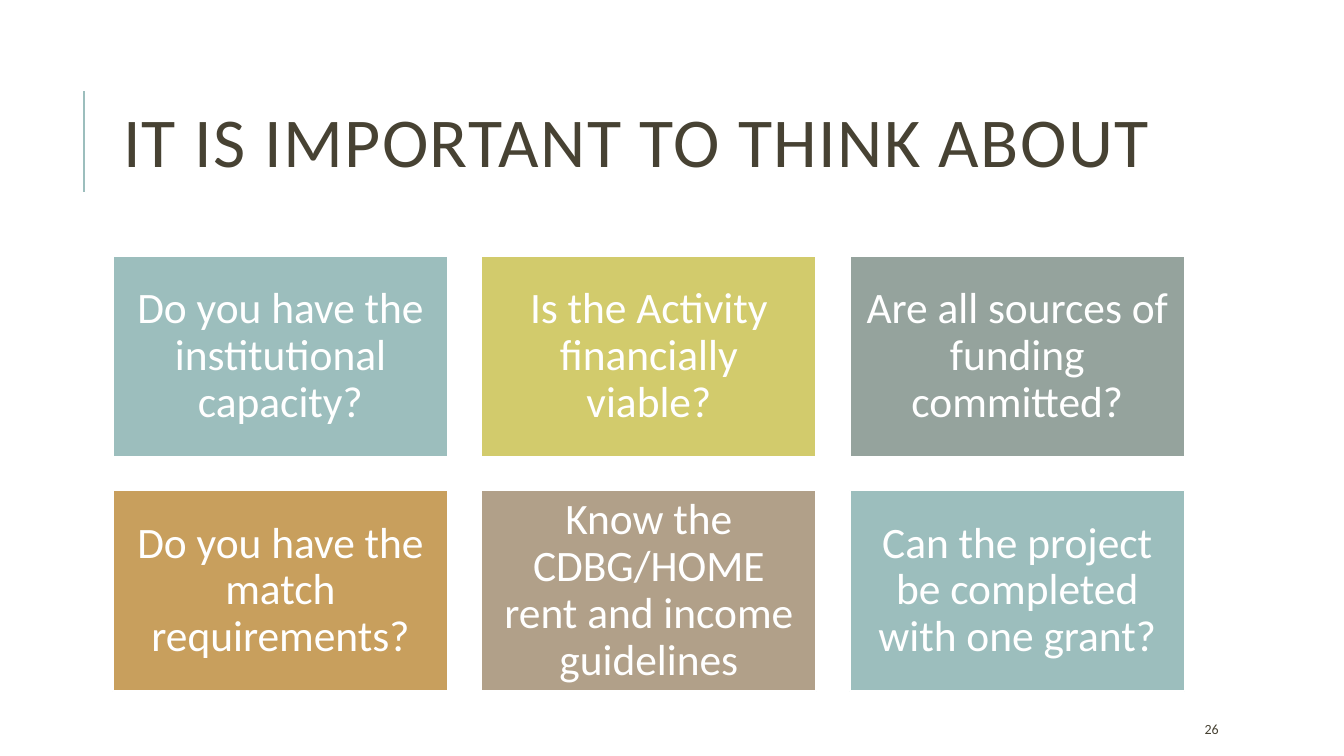
from dataclasses import dataclass

from lxml import etree
from pptx import Presentation
from pptx.dml.color import RGBColor
from pptx.enum.shapes import MSO_CONNECTOR, MSO_SHAPE
from pptx.enum.text import MSO_ANCHOR, MSO_AUTO_SIZE, PP_ALIGN
from pptx.oxml.ns import qn
from pptx.util import Inches, Pt

STRAIGHT = MSO_CONNECTOR.STRAIGHT
RECT = MSO_SHAPE.RECTANGLE
MIDDLE = MSO_ANCHOR.MIDDLE
NO_FIT = MSO_AUTO_SIZE.NONE
LEFT, CENTER = PP_ALIGN.LEFT, PP_ALIGN.CENTER
TITLE_ONLY = 5


@dataclass(frozen=True)
class Theme:
    font: str = "Calibri"
    ink: str = "474233"
    white: str = "FFFFFF"
    accents: tuple = ("9CBEBD", "D2CB6C", "95A39D", "C89F5D", "B1A089")
    title_size: int = 50
    card_size: int = 31
    number_size: int = 10


@dataclass(frozen=True)
class Grid:
    """Card grid whose gap and card height are shares of the card width."""
    left: float = 1.12
    top: float = 2.54
    width: float = 10.63
    columns: int = 3
    gap_share: float = 0.1
    height_share: float = 0.6

    def cell(self, index):
        row, col = divmod(index, self.columns)
        w = self.width / (self.columns + (self.columns - 1) * self.gap_share)
        h, gap = w * self.height_share, w * self.gap_share
        box = self.left + col * (w + gap), self.top + row * (h + gap), w, h
        return [Inches(v) for v in box]


class SlideBuilder:
    def __init__(self, prs, theme, grid):
        self.theme, self.grid = theme, grid
        self.slide = prs.slides.add_slide(prs.slide_layouts[TITLE_ONLY])

    def set_text(self, sp, text, size, color, align=LEFT, spacing=1.0):
        tf = sp.text_frame
        tf.word_wrap, tf.auto_size, tf.vertical_anchor = True, NO_FIT, MIDDLE
        p = tf.paragraphs[0]
        p.text, p.alignment, p.line_spacing = text, align, spacing
        p.font.name, p.font.size = self.theme.font, Pt(size)
        p.font.color.rgb = RGBColor.from_string(color)
        return p

    def rule(self, x, top, bottom):
        line = self.slide.shapes.add_connector(
            STRAIGHT, Inches(x), Inches(bottom), Inches(x), Inches(top))
        line.line.color.rgb = RGBColor.from_string(self.theme.accents[0])
        line.line.width = Pt(1.5)
        etree.SubElement(line._element.spPr, qn("a:effectLst"))

    def title(self, text, top, height):
        sp = self.slide.shapes.title
        sp.left, sp.top = Inches(self.grid.left), Inches(top)
        sp.width, sp.height = Inches(self.grid.width), Inches(height)
        p = self.set_text(sp, text, self.theme.title_size, self.theme.ink, spacing=0.8)
        p.runs[0].font._element.set("spc", "100")

    def card(self, index, text):
        t = self.theme
        sp = self.slide.shapes.add_shape(RECT, *self.grid.cell(index))
        sp.shadow.inherit = False
        sp.fill.solid()
        sp.fill.fore_color.rgb = RGBColor.from_string(t.accents[index % len(t.accents)])
        sp.line.color.rgb = RGBColor.from_string(t.white)
        sp.line.width = Pt(1.25)
        tf = sp.text_frame
        tf.margin_left = tf.margin_right = Inches(0.13)
        tf.margin_top = tf.margin_bottom = Inches(0.13)
        self.set_text(sp, text, t.card_size, t.white, CENTER, 0.9)

    def page_number(self, number, *box):
        sp = self.slide.shapes.add_textbox(*(Inches(v) for v in box))
        self.set_text(sp, str(number), self.theme.number_size, self.theme.ink)


def main():
    prs = Presentation()
    prs.slide_width, prs.slide_height = Inches(13.33), Inches(7.5)

    questions = (
        "Do you have the institutional capacity?",
        "Is the Activity financially viable?",
        "Are all sources of funding committed?",
        "Do you have the match requirements?",
        "Know the CDBG/HOME rent and income guidelines",
        "Can the project be completed with one grant?",
    )
    builder = SlideBuilder(prs, Theme(), Grid())
    builder.rule(0.83, 0.9, 1.9)
    builder.title("IT IS IMPORTANT TO THINK ABOUT", 0.64, 1.64)
    for i, question in enumerate(questions):
        builder.card(i, question)
    builder.page_number(26, 11.85, 7.08, 1.06, 0.3)

    prs.save("out.pptx")


if __name__ == "__main__":
    main()
